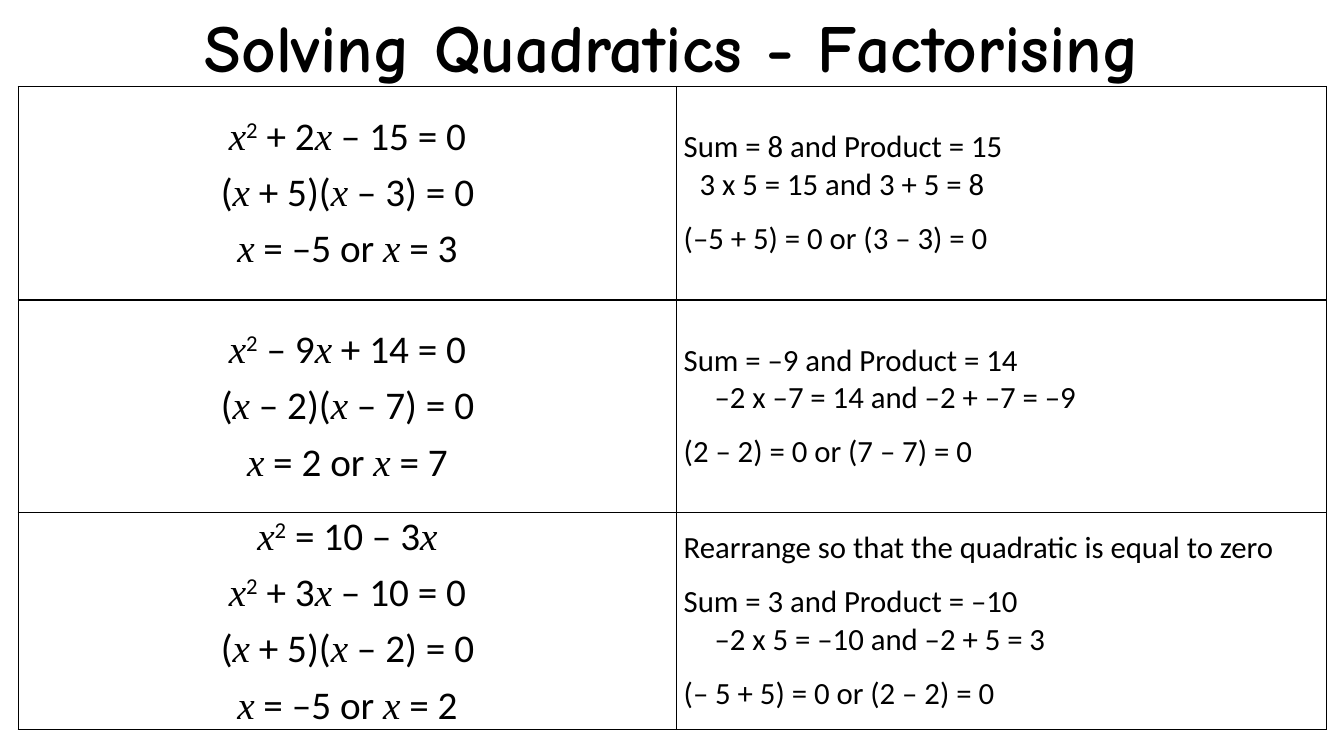
from itertools import groupby
from lxml.etree import SubElement
from pptx import Presentation
from pptx.dml.color import RGBColor as Rgb
from pptx.enum.text import MSO_ANCHOR as Anchor, MSO_AUTO_SIZE as Fit, PP_ALIGN as Align
from pptx.oxml.ns import qn
from pptx.util import Cm, Pt

HUES = {"ink": "000000", "page": "FFFFFF"}
COLS = [16.59, 16.38]
ROWS = [5.38, 5.36, 5.38]
STEP, NEAR, FAR = 0, 0.4, 0.78
CASES = [
    (
        ["x² + 2x – 15 = 0", "(x + 5)(x – 3) = 0", "x = –5 or x = 3"],
        [
            [("Sum = 8 and Product = 15", STEP), ("3 x 5 = 15 and 3 + 5 = 8", NEAR)],
            [("(–5 + 5) = 0 or (3 – 3) = 0", STEP)],
        ],
    ),
    (
        ["x² – 9x + 14 = 0", "(x – 2)(x – 7) = 0", "x = 2 or x = 7"],
        [
            [("Sum = –9 and Product = 14", STEP), ("–2 x –7 = 14 and –2 + –7 = –9", FAR)],
            [("(2 – 2) = 0 or (7 – 7) = 0", STEP)],
        ],
    ),
    (
        ["x² = 10 – 3x", "x² + 3x – 10 = 0", "(x + 5)(x – 2) = 0", "x = –5 or x = 2"],
        [
            [("Rearrange so that the quadratic is equal to zero", STEP)],
            [("Sum = 3 and Product = –10", STEP), ("–2 x 5 = –10 and –2 + 5 = 3", FAR)],
            [("(– 5 + 5) = 0 or (2 – 2) = 0", STEP)],
        ],
    ),
]


def add_run(para, text, size, face="Calibri", bold=False, slant=False):
    run = para.add_run()
    run.text = text
    font = run.font
    font.size, font.name, font.bold, font.italic = Pt(size), face, bold, slant
    font.color.rgb = Rgb.from_string(HUES["ink"])
    return run


def add_para(frame, first):
    return frame.paragraphs[0] if first else frame.add_paragraph()


def add_sum(para, text):
    para.alignment = Align.CENTER
    para.space_before = Pt(6)
    for kind, chars in groupby(text, lambda c: c if c in "x²" else ""):
        part = "".join(chars)
        if kind == "x":
            add_run(para, part, 28, "Times New Roman", slant=True)
        elif kind == "²":
            run = add_run(para, "2", 28)
            run.font._element.set("baseline", "30000")
        else:
            add_run(para, part, 28)


def add_note(frame, lines, first):
    for i, (text, left) in enumerate(lines):
        para = add_para(frame, first and i == 0)
        para.space_before = Pt(6 if i == 0 else 0)
        para.space_after = Pt(6 if i == len(lines) - 1 else 0)
        para._p.get_or_add_pPr().set("marL", str(Cm(left)))
        add_run(para, text, 22)


def set_cell(cell):
    cell.vertical_anchor = Anchor.MIDDLE
    cell.margin_left = cell.margin_right = Cm(0.18)
    cell.margin_top = cell.margin_bottom = 0
    props = cell._tc.get_or_add_tcPr()
    for side in ("lnL", "lnR", "lnT", "lnB"):
        line = SubElement(props, qn("a:" + side), w=str(Pt(1)))
        fill = SubElement(line, qn("a:solidFill"))
        SubElement(fill, qn("a:srgbClr"), val=HUES["ink"])
    cell.fill.solid()
    cell.fill.fore_color.rgb = Rgb.from_string(HUES["page"])
    return cell.text_frame


def add_title(slide, text):
    title = slide.shapes.title
    title.left, title.top, title.width, title.height = 0, 0, Cm(33.87), Cm(2.31)
    frame = title.text_frame
    frame.auto_size = Fit.NONE
    frame.vertical_anchor = Anchor.TOP
    para = frame.paragraphs[0]
    para.alignment = Align.CENTER
    add_run(para, text, 48, "Comic Neue", bold=True)


def add_grid(slide):
    table = slide.shapes.add_table(
        len(ROWS), len(COLS), Cm(0.46), Cm(2.18), Cm(sum(COLS)), Cm(sum(ROWS))
    ).table
    table.first_row = table.horz_banding = False
    for col, width in zip(table.columns, COLS):
        col.width = Cm(width)
    for row, height, (sums, notes) in zip(table.rows, ROWS, CASES):
        row.height = Cm(height)
        left, right = [set_cell(cell) for cell in row.cells]
        for i, text in enumerate(sums):
            add_sum(add_para(left, i == 0), text)
        for i, lines in enumerate(notes):
            add_note(right, lines, i == 0)


def main():
    deck = Presentation()
    deck.slide_width, deck.slide_height = Cm(33.87), Cm(19.05)
    slide = deck.slides.add_slide(deck.slide_layouts[5])
    add_title(slide, "Solving Quadratics - Factorising")
    add_grid(slide)
    deck.save("out.pptx")


if __name__ == "__main__":
    main()
